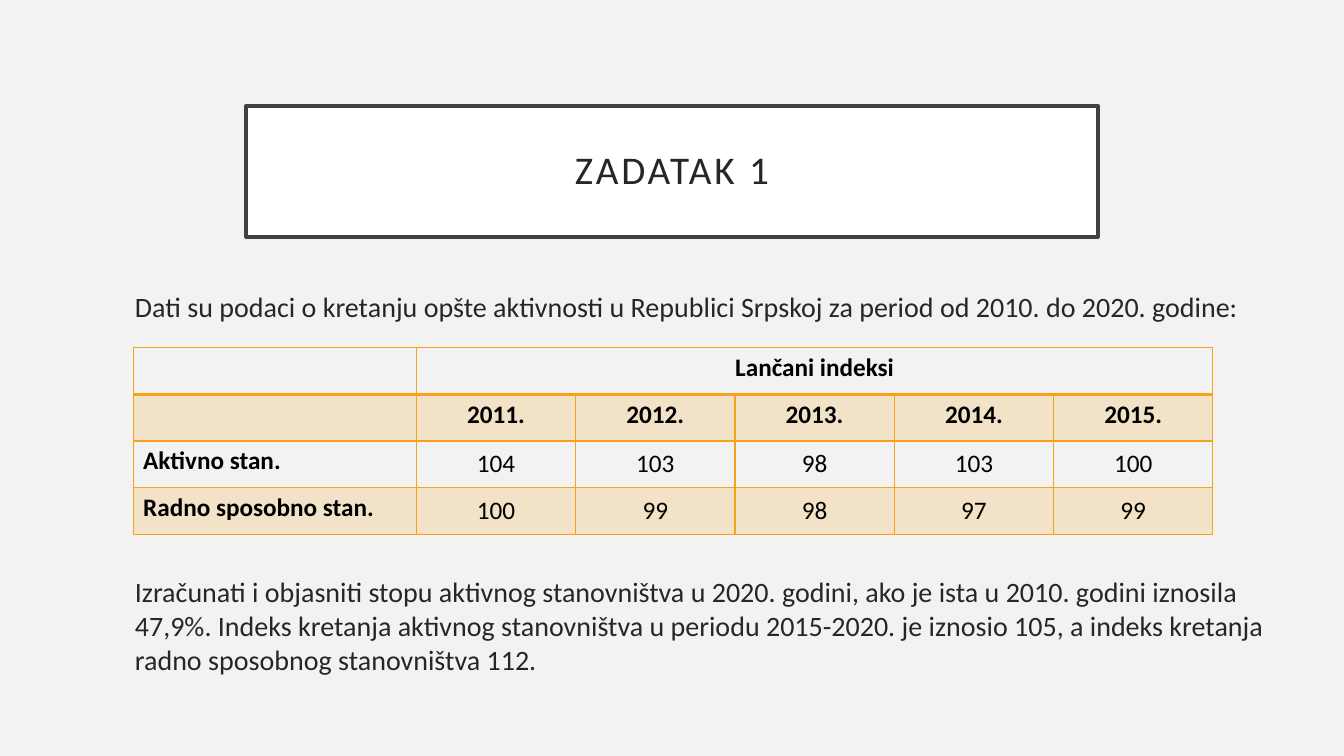
from dataclasses import dataclass

from lxml.etree import SubElement
from pptx import Presentation
from pptx.dml.color import RGBColor
from pptx.enum.shapes import MSO_SHAPE
from pptx.enum.text import MSO_ANCHOR, PP_ALIGN
from pptx.oxml.ns import qn
from pptx.slide import Slide
from pptx.table import Table, _Cell
from pptx.text.text import TextFrame, _Paragraph, _Run
from pptx.util import Inches, Pt

COLORS = {
    "background": "F2F2F2",
    "white": "FFFFFF",
    "frame": "404040",
    "text": "262626",
    "black": "000000",
    "amber": "F6A21D",
}
TITLE_FONT = {"name": "Calibri", "size": Pt(28)}
BODY_FONT = {"name": "Calibri", "size": Pt(20)}
HEADING_FONT = {"name": "Calibri", "size": Pt(18), "bold": True}
VALUE_FONT = {"name": "Calibri", "size": Pt(18), "bold": False}
TITLE_FRAME = {
    "word_wrap": True,
    "vertical_anchor": MSO_ANCHOR.MIDDLE,
    "margin_left": Inches(0.2),
    "margin_right": Inches(0.2),
    "margin_top": Inches(0.2),
    "margin_bottom": Inches(0.2),
}
VALUE_CELL = {
    "vertical_anchor": MSO_ANCHOR.MIDDLE,
    "margin_left": Inches(0.07),
    "margin_right": Inches(0.07),
    "margin_top": Inches(0),
    "margin_bottom": Inches(0),
}


@dataclass
class IndexRow:
    label: str
    entries: list[str]
    is_data: bool = False
    is_shaded: bool = False


INDEX_ROWS = [
    IndexRow("", ["Lančani indeksi", "", "", "", ""]),
    IndexRow("", ["2011.", "2012.", "2013.", "2014.", "2015."], is_shaded=True),
    IndexRow("Aktivno stan.", ["104", "103", "98", "103", "100"], is_data=True),
    IndexRow("Radno sposobno stan.", ["100", "99", "98", "97", "99"], True, True),
]
INTRO = (
    "Dati su podaci o kretanju opšte aktivnosti u Republici Srpskoj "
    "za period od 2010. do 2020. godine:"
)
QUESTION = (
    "Izračunati i objasniti stopu aktivnog stanovništva u 2020. godini, "
    "ako je ista u 2010. godini iznosila 47,9%. Indeks kretanja aktivnog "
    "stanovništva u periodu 2015-2020. je iznosio 105, a indeks kretanja "
    "radno sposobnog stanovništva 112."
)


def rgb(color: str) -> RGBColor:
    return RGBColor.from_string(COLORS[color])


def apply_format(target: object, values: dict) -> None:
    for attribute, value in values.items():
        setattr(target, attribute, value)


def write(paragraph: _Paragraph, wording: str, font: dict, color: str) -> _Run:
    apply_format(paragraph.font, font)
    run = paragraph.add_run()
    run.text = wording
    apply_format(run.font, font)
    run.font.color.rgb = rgb(color)
    return run


def add_title(slide: Slide) -> None:
    title = slide.shapes.add_shape(
        MSO_SHAPE.RECTANGLE, Inches(2.44), Inches(1.05), Inches(8.45), Inches(1.3)
    )
    title.shadow.inherit = False
    title.fill.solid()
    title.fill.fore_color.rgb = rgb("white")
    title.line.color.rgb = rgb("frame")
    title.line.width = Pt(2.5)
    apply_format(title.text_frame, TITLE_FRAME)
    heading = title.text_frame.paragraphs[0]
    apply_format(heading, {"alignment": PP_ALIGN.CENTER, "line_spacing": 0.9})
    run = write(heading, "ZADATAK 1", TITLE_FONT, "text")
    run._r.get_or_add_rPr().set("spc", "200")


def add_task(slide: Slide) -> None:
    task = slide.shapes.add_textbox(
        Inches(1.24), Inches(2.82), Inches(11.66), Inches(4.12)
    )
    frame: TextFrame = task.text_frame
    frame.word_wrap = True
    write(frame.paragraphs[0], INTRO, BODY_FONT, "text")
    question = frame.add_paragraph()
    question.space_before = Pt(180)
    write(question, QUESTION, BODY_FONT, "text")


def add_borders(cell: _Cell, widths: dict[str, float]) -> None:
    properties = cell._tc.get_or_add_tcPr()
    for side, width in widths.items():
        border = SubElement(properties, qn(f"a:ln{side}"), w=str(Pt(width)))
        paint = SubElement(border, qn("a:solidFill"))
        SubElement(paint, qn("a:srgbClr"), val=COLORS["amber"])


def fill_cell(cell: _Cell, is_shaded: bool) -> None:
    if not is_shaded:
        cell.fill.background()
        return
    cell.fill.solid()
    cell.fill.fore_color.rgb = rgb("amber")
    tint = cell._tc.tcPr.find(f"{qn('a:solidFill')}/{qn('a:srgbClr')}")
    SubElement(tint, qn("a:alpha"), val="20000")


def add_index_table(slide: Slide) -> None:
    column_widths = [2.81] + [1.58] * 5
    table: Table = slide.shapes.add_table(
        len(INDEX_ROWS), len(column_widths),
        Inches(1.32), Inches(3.45), Inches(sum(column_widths)), Inches(1.85),
    ).table
    apply_format(table, {"first_row": False, "horz_banding": False})
    for column, width in zip(table.columns, column_widths):
        column.width = Inches(width)
    for row_number, index_row in enumerate(INDEX_ROWS):
        table.rows[row_number].height = Inches(1.85 / len(INDEX_ROWS))
        top = 2 if row_number == 1 else 1
        bottom = 2 if row_number == 0 else 1
        for column_number, wording in enumerate([index_row.label, *index_row.entries]):
            cell = table.cell(row_number, column_number)
            add_borders(cell, {"L": 1, "R": 1, "T": top, "B": bottom})
            fill_cell(cell, index_row.is_shaded)
            is_value = index_row.is_data and column_number > 0
            if is_value:
                apply_format(cell, VALUE_CELL)
            paragraph = cell.text_frame.paragraphs[0]
            if column_number > 0:
                paragraph.alignment = PP_ALIGN.CENTER
            font = VALUE_FONT if is_value else HEADING_FONT
            if wording:
                write(paragraph, wording, font, "black")
            else:
                apply_format(paragraph.font, font)
    table.cell(0, 1).merge(table.cell(0, 5))


def main() -> None:
    presentation = Presentation()
    presentation.slide_width = Inches(13.33)
    presentation.slide_height = Inches(7.5)
    slide = presentation.slides.add_slide(presentation.slide_layouts[6])
    slide.background.fill.solid()
    slide.background.fill.fore_color.rgb = rgb("background")
    add_title(slide)
    add_task(slide)
    add_index_table(slide)
    presentation.save("out.pptx")


if __name__ == "__main__":
    main()
